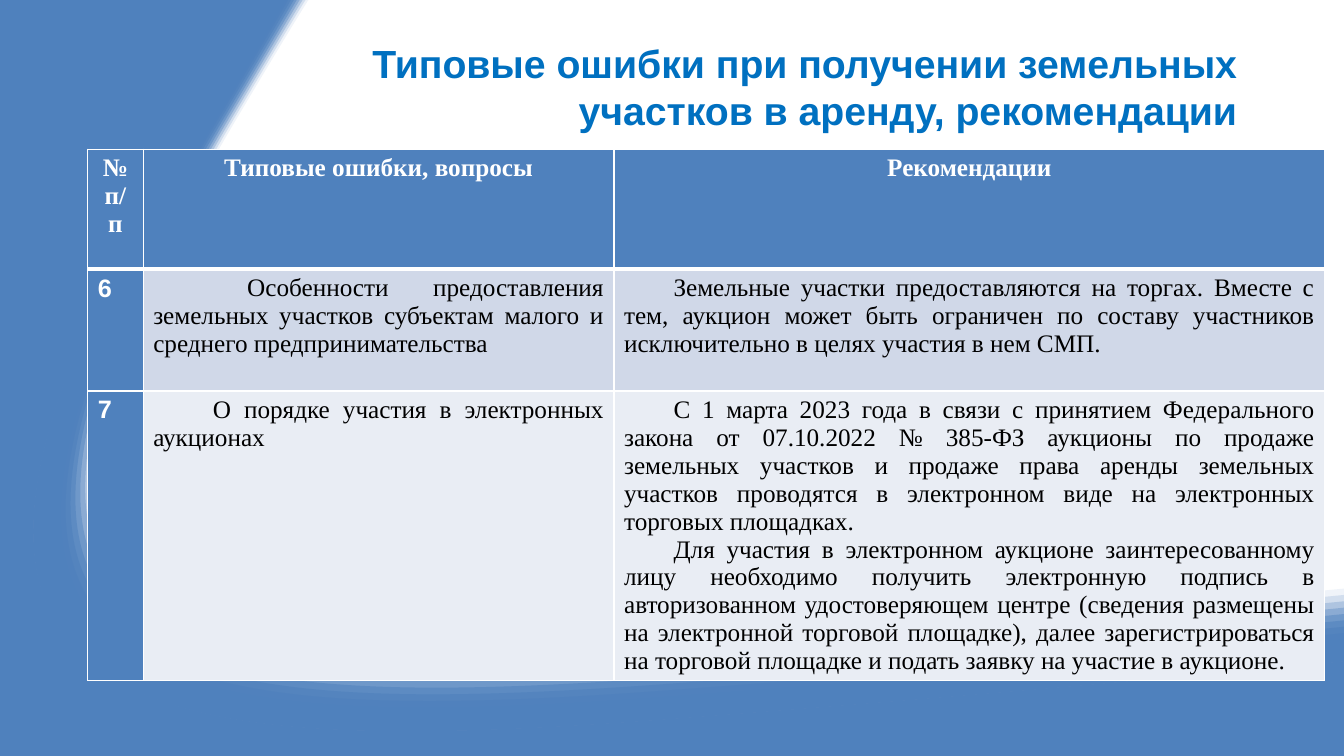
"""Build a slide on typical mistakes when leasing land plots."""
from pptx import Presentation
from pptx.dml.color import RGBColor
from pptx.enum.text import MSO_ANCHOR, PP_ALIGN
from pptx.oxml.ns import qn
from pptx.util import Inches, Pt
from lxml import etree

CENTER, RIGHT, JUSTIFY, LEFT = PP_ALIGN.CENTER, PP_ALIGN.RIGHT, PP_ALIGN.JUSTIFY, PP_ALIGN.LEFT
MIDDLE = MSO_ANCHOR.MIDDLE

BLUE = RGBColor(0x4F, 0x81, 0xBD)
TITLE_BLUE = RGBColor(0x00, 0x70, 0xC0)
WHITE = RGBColor(0xFF, 0xFF, 0xFF)
BLACK = RGBColor(0x00, 0x00, 0x00)
ROW_FILLS = (RGBColor(0xD0, 0xD8, 0xE8), RGBColor(0xE9, 0xED, 0xF4))
SANS, SERIF = "Arial", "Times New Roman"

SLIDE_WIDTH, SLIDE_HEIGHT = 13.33, 7.5
BAND_COUNT = 11
BODY_EDGE = [(2.65, 0), (2.65, 0), (2.4, 0.41), (1.96, 1.15), (-1.62, 7.12),
             (1.06, 7.55), (6.55, 7.14), (10.75, 6.82), (13.33, 6.56), (13.33, 6.56)]
FIRST_BAND_EDGE = [(3.06, 0), (3.05, 0.01), (2.81, 0.4), (2.4, 1.09), (-0.73, 6.32),
                   (1.61, 6.78), (6.9, 6.38), (10.85, 6.09), (13.31, 5.84), (13.33, 5.84)]
LAST_BAND_EDGE = [(2.77, 0), (2.71, 0.11), (2.48, 0.52), (2.11, 1.14), (-1.42, 7.03),
                  (1.22, 7.45), (6.64, 7.04), (10.48, 6.75), (12.99, 6.51), (13.33, 6.47)]

TITLE = "Типовые ошибки при получении земельных участков в аренду, рекомендации"
HEADERS = ("№ п/п", "Типовые ошибки, вопросы", "Рекомендации")
ROWS = (
    ("6",
     " Особенности предоставления земельных участков субъектам малого и среднего "
     "предпринимательства", 0.49,
     "Земельные участки предоставляются на торгах. Вместе с тем, аукцион может быть "
     "ограничен по составу участников исключительно в целях участия в нем СМП."),
    ("7",
     "О порядке участия в электронных аукционах", 0.59,
     "С 1 марта 2023 года в связи с принятием Федерального закона от 07.10.2022 № 385-ФЗ "
     "аукционы по продаже земельных участков и продаже права аренды земельных участков "
     "проводятся в электронном виде на электронных торговых площадках. \n"
     "Для участия в электронном аукционе заинтересованному лицу необходимо получить "
     "электронную подпись в авторизованном удостоверяющем центре (сведения размещены на "
     "электронной торговой площадке), далее зарегистрироваться на торговой площадке и "
     "подать заявку на участие в аукционе."),
)
RECOMMENDATION_INDENT = 0.49
COLUMN_WIDTHS = (0.55, 4.67, 7.05)
ROW_HEIGHTS = (1.19, 1.21, 2.87)


def blend(first, last, share):
    """Return the control points lying between two edges."""
    return [tuple(a + (b - a) * share for a, b in zip(start, end))
            for start, end in zip(first, last)]


def bend_edges(shape, edges):
    """Turn every three straight segments along an edge into one cubic curve."""
    segments = iter(list(shape.element.iter(qn("a:moveTo"), qn("a:lnTo"))))
    for edge in edges:
        next(segments)
        for _ in range(len(edge) // 3):
            curve = next(segments)
            curve.tag = qn("a:cubicBezTo")
            for _ in range(2):
                segment = next(segments)
                curve.append(segment[0])
                segment.getparent().remove(segment)


def fit_frame(shape, left, top, width, height):
    """Give an outline a new frame without moving its points."""
    shift_x, shift_y = shape.left - Inches(left), shape.top - Inches(top)
    for point in shape.element.iter(qn("a:pt")):
        point.set("x", str(int(point.get("x")) + shift_x))
        point.set("y", str(int(point.get("y")) + shift_y))
    outline = shape.element.find(".//" + qn("a:path"))
    outline.set("w", str(Inches(width)))
    outline.set("h", str(Inches(height)))
    shape.left, shape.top = Inches(left), Inches(top)
    shape.width, shape.height = Inches(width), Inches(height)


def add_outline(slide, box, edges, opacity=1):
    """Add a closed blue shape with the given edges and opacity."""
    left, top = box[:2]
    points = [(Inches(left + x), Inches(top + y)) for edge in edges for x, y in edge]
    builder = slide.shapes.build_freeform(*points[0])
    builder.add_line_segments(points[1:])
    shape = builder.convert_to_shape()
    bend_edges(shape, edges)
    fit_frame(shape, *box)
    shape.shadow.inherit = False
    shape.line.fill.background()
    shape.fill.solid()
    shape.fill.fore_color.rgb = BLUE
    if opacity < 1:
        color = shape.element.find(".//" + qn("a:srgbClr"))
        etree.SubElement(color, qn("a:alpha"), val=str(round(opacity * 100000)))


def add_wave(slide, left, top, width, height):
    """Draw the blue backdrop and the bands that soften its edge."""
    box = (left, top, width, height)
    corners = [[(width, height)], [(0, height)], [(0, 0)]]
    add_outline(slide, box, [BODY_EDGE] + corners)
    for band in range(BAND_COUNT):
        edge = blend(FIRST_BAND_EDGE, LAST_BAND_EDGE, band / (BAND_COUNT - 1))
        add_outline(slide, box, [edge, BODY_EDGE[::-1]], (band + 1) / BAND_COUNT)


def format_font(font, name, size, color, bold):
    """Set the look of a font."""
    font.name, font.size, font.bold = name, Pt(size), bold
    font.color.rgb = color


def add_title(slide, left, top, width, height):
    """Place the title above the backdrop."""
    title = slide.shapes.title
    title.element.getparent().append(title.element)
    title.left, title.top = Inches(left), Inches(top)
    title.width, title.height = Inches(width), Inches(height)
    frame = title.text_frame
    frame.text = TITLE
    frame.word_wrap = True
    frame.vertical_anchor = MIDDLE
    paragraph = frame.paragraphs[0]
    paragraph.alignment = RIGHT
    format_font(paragraph.runs[0].font, SANS, 28, TITLE_BLUE, True)


def set_borders(cell, bottom, top):
    """Give a cell white borders."""
    properties = cell._tc.get_or_add_tcPr()
    for side, width in (("L", 1), ("R", 1), ("T", top), ("B", bottom)):
        line = etree.SubElement(properties, qn(f"a:ln{side}"), w=str(Pt(width)))
        fill = etree.SubElement(line, qn("a:solidFill"))
        etree.SubElement(fill, qn("a:srgbClr"), val=str(WHITE))


def fill_cell(cell, text, fill, font_name, color, bold, alignment, indent=0):
    """Write text into a cell and format it."""
    cell.fill.solid()
    cell.fill.fore_color.rgb = fill
    cell.text_frame.text = text
    for paragraph in cell.text_frame.paragraphs:
        paragraph.alignment = alignment
        if indent:
            properties = paragraph._p.get_or_add_pPr()
            properties.set("marL", "0")
            properties.set("indent", str(Inches(indent)))
        format_font(paragraph.runs[0].font, font_name, 18, color, bold)


def add_mistakes_table(slide, left, top):
    """Add the table of mistakes and recommendations."""
    table = slide.shapes.add_table(
        len(ROW_HEIGHTS), len(COLUMN_WIDTHS), Inches(left), Inches(top),
        Inches(sum(COLUMN_WIDTHS)), Inches(sum(ROW_HEIGHTS))).table
    for column, width in zip(table.columns, COLUMN_WIDTHS):
        column.width = Inches(width)
    for index, (row, height) in enumerate(zip(table.rows, ROW_HEIGHTS)):
        row.height = Inches(height)
        for cell in row.cells:
            set_borders(cell, bottom=3 if index == 0 else 1, top=3 if index == 1 else 1)
    for cell, header in zip(table.rows[0].cells, HEADERS):
        fill_cell(cell, header, BLUE, SERIF, WHITE, True, CENTER)
    for index, (number, mistake, indent, recommendation) in enumerate(ROWS):
        number_cell, mistake_cell, recommendation_cell = table.rows[index + 1].cells
        fill = ROW_FILLS[index]
        fill_cell(number_cell, number, BLUE, SANS, WHITE, True, LEFT)
        fill_cell(mistake_cell, mistake, fill, SERIF, BLACK, False, JUSTIFY, indent)
        fill_cell(recommendation_cell, recommendation, fill, SERIF, BLACK, False, JUSTIFY,
                  RECOMMENDATION_INDENT)


def main():
    """Build and save the presentation."""
    presentation = Presentation()
    presentation.slide_width = Inches(SLIDE_WIDTH)
    presentation.slide_height = Inches(SLIDE_HEIGHT)
    slide = presentation.slides.add_slide(presentation.slide_layouts[5])
    add_wave(slide, 0, 0, SLIDE_WIDTH, SLIDE_HEIGHT)
    add_title(slide, 2.77, 0.23, 9.6, 1.25)
    add_mistakes_table(slide, 0.87, 1.48)
    presentation.save("out.pptx")


if __name__ == "__main__":
    main()
